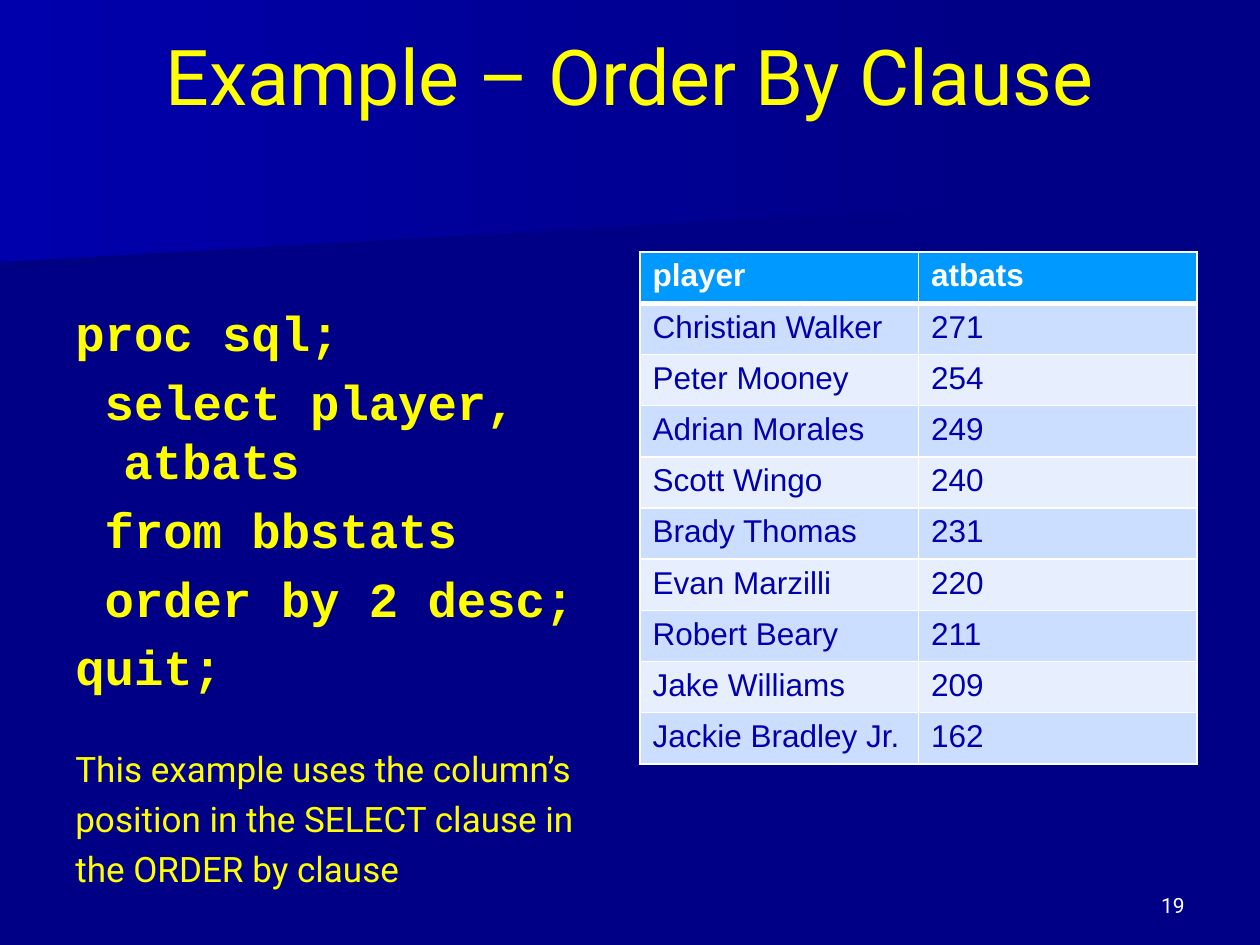
from lxml import etree
from pptx import Presentation, util as u
from pptx.dml.color import RGBColor
from pptx.enum import text
from pptx.oxml.ns import qn

PX = 914400 / 126
YELLOW, WHITE, NAVY, BLUE = "FFFF00", "FFFFFF", "000086", "0000AC"
BANDS = ("CCDEFF", "E7EFFF")

CODE = ["proc sql;", " select player, atbats", " from bbstats",
        " order by 2 desc;", "quit;"]
NOTE = ["This example uses the column’s", "position in the SELECT clause in",
        "the ORDER by clause"]
ROWS = [("player", "atbats"), ("Christian Walker", "271"),
        ("Peter Mooney", "254"), ("Adrian Morales", "249"),
        ("Scott Wingo", "240"), ("Brady Thomas", "231"),
        ("Evan Marzilli", "220"), ("Robert Beary", "211"),
        ("Jake Williams", "209"), ("Jackie Bradley Jr.", "162")]


def px(n):
    return u.Emu(round(n * PX))


def rgb(color):
    return RGBColor.from_string(color)


def style(p, font, size, color, bold=False):
    for r in p.runs:
        r.font.name = font
        r.font.size = u.Pt(size)
        r.font.bold = bold
        r.font.color.rgb = rgb(color)


def add_wedge(s, points, start, end):
    builder = s.shapes.build_freeform(*points[0], scale=PX)
    builder.add_line_segments(points[1:], close=True)
    sp = builder.convert_to_shape()
    sp.shadow.inherit = False
    sp.line.fill.background()
    sp.fill.gradient()
    sp.fill.gradient_angle = 0
    for stop, color in zip(sp.fill.gradient_stops, (start, end)):
        stop.color.rgb = rgb(color)


def add_box(s, box, lines, anchor=text.MSO_ANCHOR.TOP):
    tf = s.shapes.add_textbox(*map(px, box)).text_frame
    tf.word_wrap = True
    tf.vertical_anchor = anchor
    tf.text = "\n".join(lines)
    return tf


def add_label(s, box, line, size, color, align, anchor):
    tf = add_box(s, box, [line], anchor)
    p = tf.paragraphs[0]
    p.alignment = align
    style(p, "Roboto", size, color)
    return tf


def add_body(s, box):
    tf = add_box(s, box, CODE + NOTE)
    tf.margin_top = px(82)
    for i, p in enumerate(tf.paragraphs):
        pPr = p._p.get_or_add_pPr()
        pPr.set("marL", str(px(48)))
        pPr.set("indent", str(px(-48)))
        if i < len(CODE):
            p.line_spacing = u.Pt(33.75)
            p.space_before = u.Pt(5.6 if i else 0)
            style(p, "Courier New", 28, YELLOW, True)
        else:
            p.space_before = u.Pt(29.6 if i == len(CODE) else 4.6)
            style(p, "Roboto", 20, YELLOW)


def set_borders(cell, bottom):
    tcPr = cell._tc.get_or_add_tcPr()
    for i, (side, width) in enumerate(zip("LRTB", (1, 1, 1, bottom))):
        ln = etree.Element(qn(f"a:ln{side}"), w=str(u.Pt(width)))
        fill = etree.SubElement(ln, qn("a:solidFill"))
        etree.SubElement(fill, qn("a:srgbClr"), val=WHITE)
        tcPr.insert(i, ln)


def add_stats(s, box):
    table = s.shapes.add_table(len(ROWS), 2, *map(px, box)).table
    for i, row in enumerate(ROWS):
        header = i == 0
        for j, value in enumerate(row):
            cell = table.cell(i, j)
            cell.text = value
            cell.fill.solid()
            cell.fill.fore_color.rgb = rgb("0099FF" if header else BANDS[(i - 1) % 2])
            style(cell.text_frame.paragraphs[0], "Arial", 18,
                  WHITE if header else BLUE, header)
            set_borders(cell, 3 if header else 1)
            if i == 1:
                cell._tc.tcPr.find(qn("a:lnT")).set("w", str(u.Pt(3)))


def main():
    prs = Presentation()
    prs.slide_width, prs.slide_height = px(1260), px(945)
    s = prs.slides.add_slide(prs.slide_layouts[6])
    s.background.fill.solid()
    s.background.fill.fore_color.rgb = rgb(NAVY)
    add_wedge(s, [(980, 193), (0, 273), (0, 127), (982, 127), (980, 161)],
              "000083", NAVY)
    add_wedge(s, [(998, 204), (0, 262), (0, 0), (998, 0)], BLUE, NAVY)
    title = add_label(s, (63, 42, 1134, 157), "Example – Order By Clause", 44,
                      YELLOW, text.PP_ALIGN.CENTER, text.MSO_ANCHOR.MIDDLE)
    title.margin_bottom = px(97)
    add_body(s, (63, 220, 557, 620))
    add_stats(s, (640, 252, 557, 512))
    add_label(s, (903, 861, 294, 63), "19", 12, WHITE,
              text.PP_ALIGN.RIGHT, text.MSO_ANCHOR.BOTTOM)
    prs.save("out.pptx")


if __name__ == "__main__":
    main()
